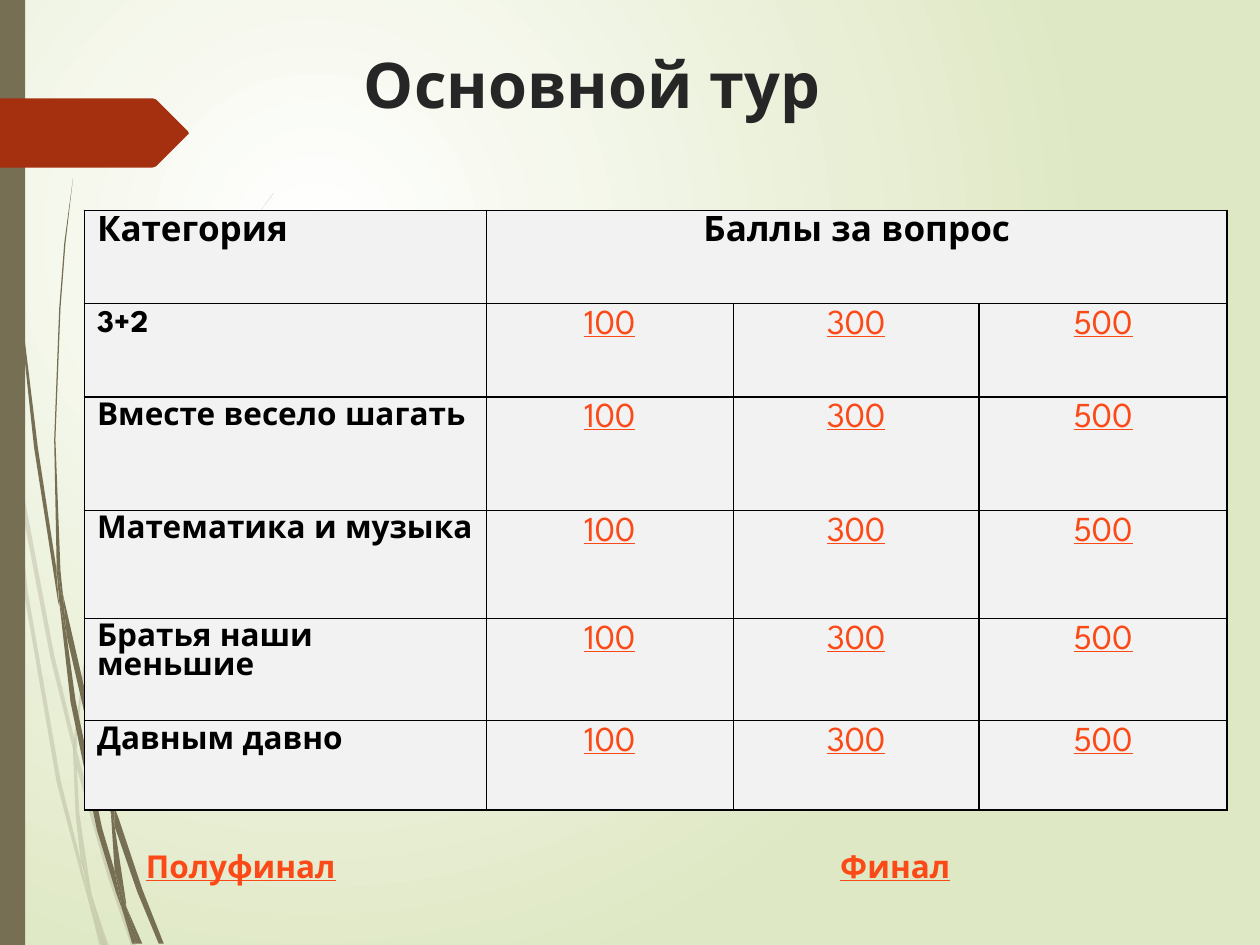
from lxml import etree
from pptx import Presentation
from pptx.dml.color import RGBColor
from pptx.enum.shapes import MSO_SHAPE
from pptx.enum.text import MSO_ANCHOR, PP_ALIGN
from pptx.oxml.ns import qn
from pptx.util import Inches, Pt

RECT = MSO_SHAPE.RECTANGLE
TOP, LEFT, CENTER = MSO_ANCHOR.TOP, PP_ALIGN.LEFT, PP_ALIGN.CENTER

FONT = "League Spartan"
BROWN, RED, ORANGE = "766F54", "A53010", "FB4A18"
BLACK, DARK, PALE = "000000", "262626", "F2F2F2"
BACKGROUND = ("FFFFFF", "DFE8C4")

HEADER = ("Категория", "Баллы за вопрос")
CATEGORIES = ["3+2", "Вместе весело шагать", "Математика и музыка",
              "Братья наши меньшие", "Давным давно"]
POINTS = ["100", "300", "500"]
COL_WIDTHS = [3.19, 1.96, 1.95, 1.97]
ROW_HEIGHTS = [0.74, 0.74, 0.9, 0.86, 0.81, 0.71]
TABLE_AT = (0.67, 1.67)

# text, (left, top, width, height), size, colour, underlined
LABELS = [
    ("Основной тур", (2.79, 0.29, 7.21, 1.4), 36, DARK, False),
    ("Полуфинал", (1.06, 6.66, 1.97, 0.4), 18, ORANGE, True),
    ("Финал", (6.57, 6.66, 1.42, 0.4), 18, ORANGE, True),
]

# Grass blades: outline points in inches
PALE_BLADES = [
    [(0.08, 3.5), (0.06, 3.22), (0, 2.82), (0, 2.99), (0.07, 3.44)],
    [(0.4, 5.22), (0.59, 5.99), (0.59, 5.86), (0.43, 5.2), (0.1, 3.45),
     (0.12, 3.76)],
    [(0.64, 6.07), (0.61, 5.96), (0.61, 6.1), (0.85, 6.94), (1.04, 7.5),
     (1.08, 7.5), (0.88, 6.92)],
    [(0.83, 7.5), (0.86, 7.5), (0.73, 7.11)],
    [(0.64, 6.83), (0.48, 6.19), (0.22, 4.69), (0.12, 3.76), (0.08, 3.5),
     (0.19, 4.7), (0.45, 6.21), (0.64, 6.93), (0.7, 7.14), (0.69, 7.07)],
    [(0.58, 5.99), (0.6, 6.46), (0.64, 6.83), (0.67, 6.92), (0.73, 7.11),
     (0.72, 7.06), (0.63, 6.46), (0.61, 6.1), (0.61, 6.08)],
    [(0.61, 5.84), (0.76, 4.62), (1.11, 3.49), (1.59, 2.45), (1.87, 1.98),
     (2.01, 1.75), (2.17, 1.54), (2.17, 1.53), (2.01, 1.75), (1.86, 1.97),
     (1.58, 2.44), (1.1, 3.48), (0.75, 4.61), (0.59, 5.84), (0.59, 5.86),
     (0.61, 5.96)],
    [(0.7, 7.14), (0.79, 7.5), (0.82, 7.5)],
    [(0.61, 6.08), (0.61, 6.1), (0.61, 5.96), (0.59, 5.86), (0.58, 5.99)],
    [(0.67, 6.92), (0.65, 6.83), (0.69, 7.07), (0.7, 7.14), (0.82, 7.5),
     (0.83, 7.5), (0.73, 7.11)],
]
DARK_BLADES = [
    [(0.05, 1.1), (0.14, 2.33), (0.27, 3.55), (0.46, 4.77), (0.47, 4.81),
     (0.45, 4.57), (0.45, 4.53), (0.3, 3.55), (0.15, 2.32), (0.06, 1.09),
     (0.04, 0.48), (0.03, 0), (0.02, 0), (0.03, 0.48)],
    [(0.73, 5.92), (0.88, 6.45), (0.88, 6.31), (0.77, 5.9), (0.5, 4.72),
     (0.53, 5.05)],
    [(0.94, 6.49), (0.91, 6.41), (0.91, 6.56), (1.09, 7.08), (1.26, 7.49),
     (1.3, 7.49), (1.13, 7.06)],
    [(0.91, 6.91), (0.81, 6.57), (0.6, 5.56), (0.53, 5.05), (0.47, 4.77),
     (0.56, 5.57), (0.77, 6.59), (0.92, 7.08), (0.97, 7.22), (0.96, 7.17)],
    [(0.5, 4.72), (0.48, 4.53), (0.44, 3.49), (0.48, 2.45), (0.52, 1.93),
     (0.58, 1.41), (0.51, 1.93), (0.47, 2.45), (0.43, 3.49), (0.45, 4.49),
     (0.49, 4.72)],
    [(1.1, 7.49), (1.13, 7.49), (1, 7.19)],
    [(0.47, 4.77), (0.53, 5.05), (0.5, 4.72), (0.49, 4.72), (0.45, 4.49),
     (0.45, 4.53)],
    [(0.91, 6.33), (1.03, 5.52), (1.31, 4.76), (1.69, 4.06), (1.91, 3.74),
     (2.03, 3.59), (2.16, 3.44), (2.15, 3.44), (2.03, 3.58), (1.91, 3.73),
     (1.68, 4.05), (1.29, 4.74), (1.01, 5.51), (0.88, 6.31), (0.91, 6.41)],
    [(0.97, 7.22), (1.05, 7.49), (1.08, 7.49)],
    [(0.88, 6.45), (0.91, 6.91), (0.96, 7.06), (1, 7.19), (1, 7.16),
     (0.91, 6.56), (0.9, 6.51)],
    [(0.88, 6.45), (0.9, 6.51), (0.91, 6.56), (0.91, 6.41), (0.88, 6.31)],
    [(0.96, 7.06), (0.91, 6.91), (0.96, 7.17), (0.97, 7.22), (1.08, 7.49),
     (1.1, 7.49), (1, 7.19)],
]
ARROW = [(1.49, 1.07), (1.24, 1.32), (1.21, 1.33), (0, 1.33), (0, 0.78),
         (1.21, 0.78), (1.24, 0.79), (1.49, 1.04), (1.5, 1.06)]


def rgb(color):
    return RGBColor.from_string(color)


def paint(sp, color, alpha=None):
    """Flat fill without line or shadow; alpha in percent."""
    sp.shadow.inherit = False
    sp.line.fill.background()
    sp.fill.solid()
    sp.fill.fore_color.rgb = rgb(color)
    if alpha:
        clr = sp._element.spPr.find(qn("a:solidFill"))[0]
        etree.SubElement(clr, qn("a:alpha"), val=str(alpha * 1000))


def add_outline(s, points, color, alpha=None):
    pts = [(Inches(x), Inches(y)) for x, y in points]
    builder = s.shapes.build_freeform(*pts[0])
    builder.add_line_segments(pts[1:], close=True)
    paint(builder.convert_to_shape(), color, alpha)


def write(tf, text, align=LEFT, **fmt):
    p = tf.paragraphs[0]
    p.alignment = align
    r = p.add_run()
    r.text = text
    r.font.color.rgb = rgb(fmt.pop("color"))
    for name, value in {"name": FONT, **fmt}.items():
        setattr(r.font, name, value)
    return p


def add_borders(cell):
    tcPr = cell._tc.get_or_add_tcPr()
    for i, side in enumerate(("lnL", "lnR", "lnT", "lnB")):
        ln = etree.Element(qn(f"a:{side}"), w=str(Pt(1)))
        fill = etree.SubElement(ln, qn("a:solidFill"))
        etree.SubElement(fill, qn("a:srgbClr"), val=BLACK)
        tcPr.insert(i, ln)


def set_background(s):
    fill = s.background.fill
    fill.gradient()
    for stop, color in zip(fill.gradient_stops, BACKGROUND):
        stop.color.rgb = rgb(color)
    lin = next(s._element.iter(qn("a:lin")))
    path = etree.Element(qn("a:path"), path="circle")
    etree.SubElement(path, qn("a:fillToRect"),
                     l="50000", t="50000", r="100000", b="100000")
    lin.getparent().replace(lin, path)


def add_score_table(s):
    size = (sum(COL_WIDTHS), sum(ROW_HEIGHTS))
    table = s.shapes.add_table(len(ROW_HEIGHTS), len(COL_WIDTHS),
                               *map(Inches, TABLE_AT + size)).table
    for col, width in zip(table.columns, COL_WIDTHS):
        col.width = Inches(width)
    for row, height in zip(table.rows, ROW_HEIGHTS):
        row.height = Inches(height)
    for cell in table.iter_cells():
        cell.fill.solid()
        cell.fill.fore_color.rgb = rgb(PALE)
        add_borders(cell)
    table.cell(0, 1).merge(table.cell(0, len(POINTS)))
    for c, (text, align) in enumerate(zip(HEADER, (LEFT, CENTER))):
        write(table.cell(0, c).text_frame, text, align,
              size=Pt(20), bold=True, color=BLACK)
    for i, category in enumerate(CATEGORIES, 1):
        write(table.cell(i, 0).text_frame, category,
              size=Pt(18), bold=True, color=BLACK)
        for c, value in enumerate(POINTS, 1):
            write(table.cell(i, c).text_frame, value, CENTER, size=Pt(20),
                  bold=False, underline=True, color=ORANGE)


def add_label(s, text, box, size, color, underline):
    tf = s.shapes.add_textbox(*map(Inches, box)).text_frame
    tf.word_wrap = True
    tf.vertical_anchor = TOP
    p = write(tf, text, size=Pt(size), bold=True, underline=underline,
              color=color)
    p.line_spacing = Pt(size * 1.25)


def main():
    prs = Presentation()
    prs.slide_width, prs.slide_height = Inches(10), Inches(7.5)
    s = prs.slides.add_slide(prs.slide_layouts[6])
    set_background(s)
    for blade in PALE_BLADES:
        add_outline(s, blade, BROWN, alpha=20)
    for blade in DARK_BLADES:
        add_outline(s, blade, BROWN)
    paint(s.shapes.add_shape(RECT, 0, 0, Inches(0.2), prs.slide_height), BROWN)
    add_outline(s, ARROW, RED)
    add_score_table(s)
    for label in LABELS:
        add_label(s, *label)
    prs.save("out.pptx")


if __name__ == "__main__":
    main()
